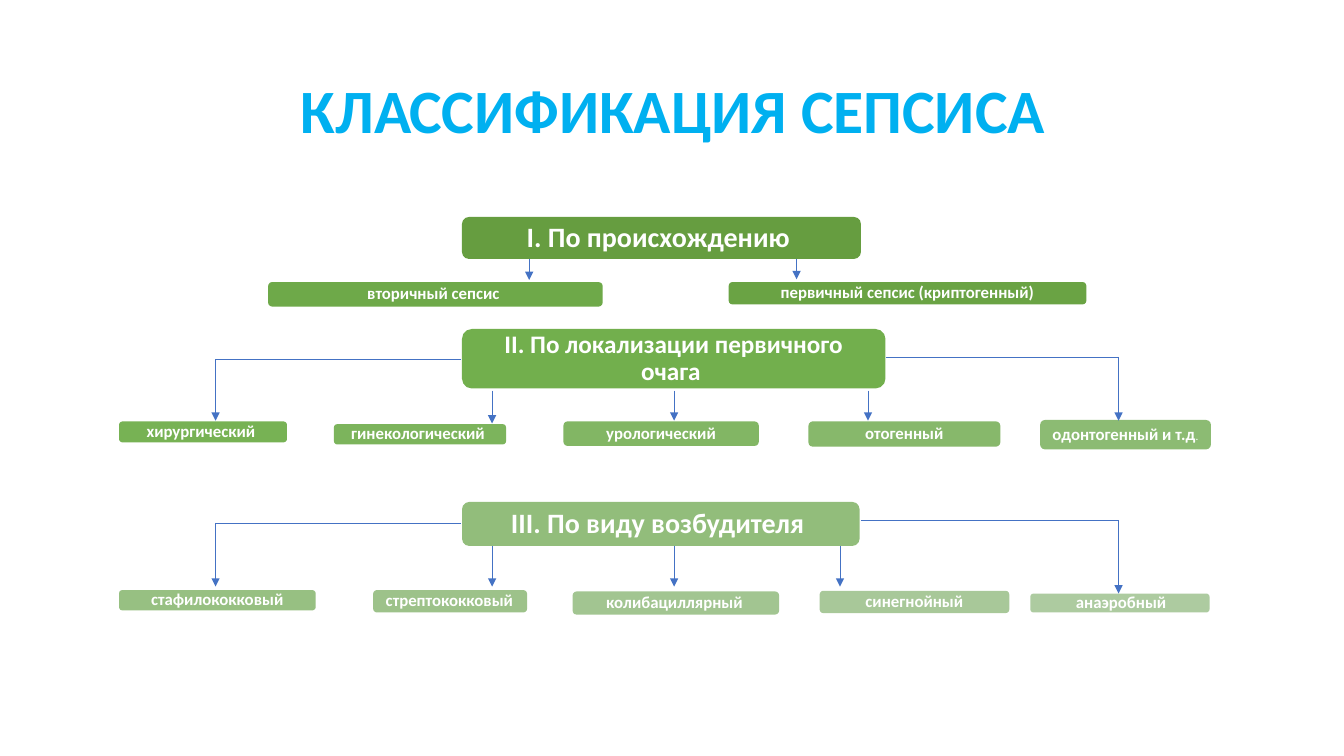
"""Build the sepsis classification slide."""
from pptx import Presentation
from pptx.util import Pt
from pptx.dml.color import RGBColor
from pptx.enum.shapes import MSO_SHAPE as Shape, MSO_CONNECTOR as Line
from pptx.enum.text import PP_ALIGN as Align, MSO_ANCHOR as Anchor
from pptx.oxml.ns import qn
from lxml.etree import SubElement

TITLE = "КЛАССИФИКАЦИЯ СЕПСИСА"
FONT, WHITE, SKY, BLUE = "Calibri", "FFFFFF", "00B0F0", "4472C4"
BODY, TINY = 12, 8

# Box: text or (tiny lead, text, tiny tail), left, top, width, height, fill
# Drop: x, top, bottom.  Arm: from x, to x, y, bottom.
GROUPS = [
    {"head": ("I. По происхождению ", 330, 155, 285, 30, "669D40"), "size": 20,
     "kids": [("первичный сепсис (криптогенный)", 520.5, 201.5, 255.5, 16, "6AA344"),
              ("вторичный сепсис ", 191.5, 201.5, 239, 17.5, "6EA949")],
     "drops": [(378, 185, 200), (569, 185, 199.5)],
     "arms": []},
    {"head": ("II. По локализации первичного очага ", 330, 235, 302.5, 42.5, "72AF4D"),
     "size": 18,
     "kids": [("хирургический ", 85, 301, 120, 15, "77B254"),
              ("гинекологический ", 238.5, 303, 123, 14.5, "7CB45C"),
              ("урологический", 402.5, 301, 139.5, 17.5, "82B664"),
              ("отогенный", 577.5, 301, 137, 18, "87B86B"),
              (("", "одонтогенный и т.д", "."), 743, 300, 122, 21, "8CBB73")],
     "drops": [(351.5, 279, 302.5), (481.5, 279, 300.5), (620, 279, 300.5)],
     "arms": [(329, 154, 256.5, 300.5), (633, 799, 255, 300.5)]},
    {"head": ("III. По виду возбудителя ", 330, 358.5, 284, 31.5, "92BD7B"), "size": 20,
     "kids": [(" стафилококковый ", 85, 421.5, 140.5, 14.5, "97C082"),
              ((" ", "стрептококковый ", ""), 266.5, 421.5, 110, 16, "9DC28A"),
              (("", "колибациллярный", " "), 409, 422.5, 147.5, 16.5, "A2C591"),
              ("синегнойный", 585.5, 422, 135.5, 16, "A8C899"),
              ((" ", "анаэробный", ""), 736, 424, 128, 13.5, "ADCBA0")],
     "drops": [(351.5, 390, 419), (481.5, 390, 419), (600, 390, 419)],
     "arms": [(329, 154, 373.5, 419), (615, 799, 372, 424)]},
]


def tint(code):
    return RGBColor.from_string(code)


def style(para, size, color):
    para.alignment, para.line_spacing = Align.CENTER, 0.9
    font = para.font
    font.name, font.size, font.bold = FONT, Pt(size), True
    font.color.rgb = tint(color)


def add_box(slide, text, left, top, width, height, fill, size, side, edge):
    box = slide.shapes.add_shape(
        Shape.ROUNDED_RECTANGLE, Pt(left), Pt(top), Pt(width), Pt(height))
    box.shadow.inherit = False
    box.fill.solid()
    box.fill.fore_color.rgb = tint(fill)
    box.line.fill.background()
    frame = box.text_frame
    frame.word_wrap, frame.vertical_anchor = True, Anchor.MIDDLE
    frame.margin_left = frame.margin_right = Pt(side)
    frame.margin_top = frame.margin_bottom = Pt(edge)
    para = frame.paragraphs[0]
    style(para, size, WHITE)
    parts = ("", text, "") if isinstance(text, str) else text
    for spot, part in enumerate(parts):
        if part:
            run = para.add_run()
            run.text = part
            if spot != 1:
                run.font.size, run.font.bold = Pt(TINY), False


def add_line(slide, x1, y1, x2, y2, arrow):
    line = slide.shapes.add_connector(Line.STRAIGHT, Pt(x1), Pt(y1), Pt(x2), Pt(y2))
    line.line.width = Pt(0.5)
    line.line.color.rgb = tint(BLUE)
    if arrow:
        SubElement(line.line._get_or_add_ln(), qn("a:tailEnd"), type="triangle")
    SubElement(line._element.spPr, qn("a:effectLst"))


def main():
    deck = Presentation()
    deck.slide_width, deck.slide_height = Pt(960), Pt(540)
    slide = deck.slides.add_slide(deck.slide_layouts[5])
    title = slide.shapes.title
    title.left, title.top, title.width, title.height = Pt(85), Pt(44.5), Pt(792), Pt(73.5)
    title.text_frame.text = TITLE
    title.text_frame.vertical_anchor = Anchor.MIDDLE
    style(title.text_frame.paragraphs[0], 44, SKY)
    for group in GROUPS:
        add_box(slide, *group["head"], group["size"], 5.5, 3)
        for kid in group["kids"]:
            add_box(slide, *kid, BODY, 3.5, 2)
        for x, top, end in group["drops"]:
            add_line(slide, x, top, x, end, True)
        for start, x, y, end in group["arms"]:
            add_line(slide, start, y, x, y, False)
            add_line(slide, x, y, x, end, True)
    deck.save("out.pptx")


if __name__ == "__main__":
    main()
